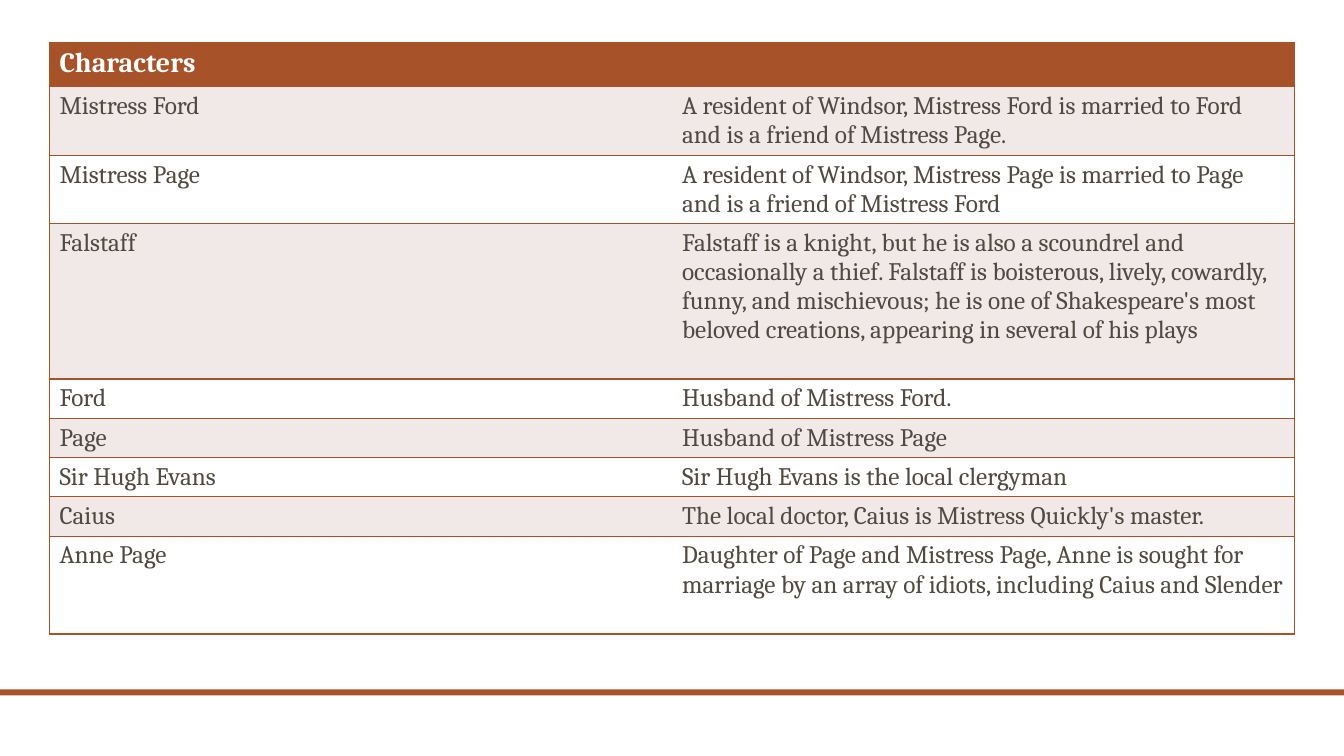
import pptx
import pptx.dml.color
import pptx.enum.shapes
import pptx.oxml.ns
import pptx.util
from lxml import etree
from pptx.util import Inches

RUST = pptx.dml.color.RGBColor(0xA8, 0x52, 0x29)
BLUSH = pptx.dml.color.RGBColor(0xF1, 0xE9, 0xE8)
WHITE = pptx.dml.color.RGBColor(0xFF, 0xFF, 0xFF)
BROWN = pptx.dml.color.RGBColor(0x51, 0x4A, 0x40)
FONT = "Cambria"

# Name, description, row height in inches
ROWS = [
    ("Characters", "", 0.42),
    ("Mistress Ford", "A resident of Windsor, Mistress Ford is married to Ford "
     "and is a friend of Mistress Page.", 0.68),
    ("Mistress Page", "A resident of Windsor, Mistress Page is married to Page "
     "and is a friend of Mistress Ford", 0.68),
    ("Falstaff", "Falstaff is a knight, but he is also a scoundrel and occasionally "
     "a thief. Falstaff is boisterous, lively, cowardly, funny, and mischievous; he is "
     "one of Shakespeare's most beloved creations, appearing in several of his plays", 1.54),
    ("Ford", "Husband of Mistress Ford.", 0.39),
    ("Page", "Husband of Mistress Page", 0.39),
    ("Sir Hugh Evans", "Sir Hugh Evans is the local clergyman", 0.39),
    ("Caius", "The local doctor, Caius is Mistress Quickly's master.", 0.39),
    ("Anne Page", "Daughter of Page and Mistress Page, Anne is sought for marriage "
     "by an array of idiots, including Caius and Slender", 0.97),
]


def write_text(frame, text, size=18, color=BROWN, bold=False):
    para = frame.paragraphs[0]
    para.font.size = pptx.util.Pt(size)
    if text:
        span = para.add_run()
        span.text = text
        span.font.name = FONT
        span.font.size = pptx.util.Pt(size)
        span.font.bold = bold
        span.font.color.rgb = color


def set_borders(cell, visible_sides):
    """Draw the given sides (letters of LRTB) and hide the others; call before filling."""
    properties = cell._tc.get_or_add_tcPr()
    for side in "LRTB":
        line = etree.SubElement(properties, pptx.oxml.ns.qn("a:ln" + side))
        line.set("w", str(pptx.util.Pt(1)))
        if side in visible_sides:
            fill = etree.SubElement(line, pptx.oxml.ns.qn("a:solidFill"))
            etree.SubElement(fill, pptx.oxml.ns.qn("a:srgbClr")).set("val", str(RUST))
        else:
            etree.SubElement(line, pptx.oxml.ns.qn("a:noFill"))


def fill_cell(cell, color):
    cell.fill.solid()
    cell.fill.fore_color.rgb = color


def add_character_table(page):
    height = sum(row_height for _, _, row_height in ROWS)
    table = page.shapes.add_table(len(ROWS), 2, Inches(0.49), Inches(0.42),
                                  Inches(12.35), Inches(height)).table
    for index, (name, description, row_height) in enumerate(ROWS):
        table.rows[index].height = Inches(row_height)
        if index == 0:
            color, text_format = RUST, {"size": 20, "color": WHITE, "bold": True}
        else:
            color, text_format = (BLUSH if index % 2 else WHITE), {}
        for column, (text, sides) in enumerate([(name, "LTB"), (description, "RTB")]):
            cell = table.cell(index, column)
            set_borders(cell, sides)
            fill_cell(cell, color)
            write_text(cell.text_frame, text, **text_format)


def add_footer_bar(page):
    bar = page.shapes.add_shape(pptx.enum.shapes.MSO_SHAPE.RECTANGLE, 0, Inches(6.84),
                                Inches(13.33), Inches(0.06))
    bar.shadow.inherit = False
    bar.fill.solid()
    bar.fill.fore_color.rgb = RUST
    bar.line.fill.background()


def main():
    deck = pptx.Presentation()
    deck.slide_width, deck.slide_height = Inches(13.33), Inches(7.5)
    page = deck.slides.add_slide(deck.slide_layouts[6])
    add_footer_bar(page)
    add_character_table(page)
    deck.save("out.pptx")


if __name__ == "__main__":
    main()
